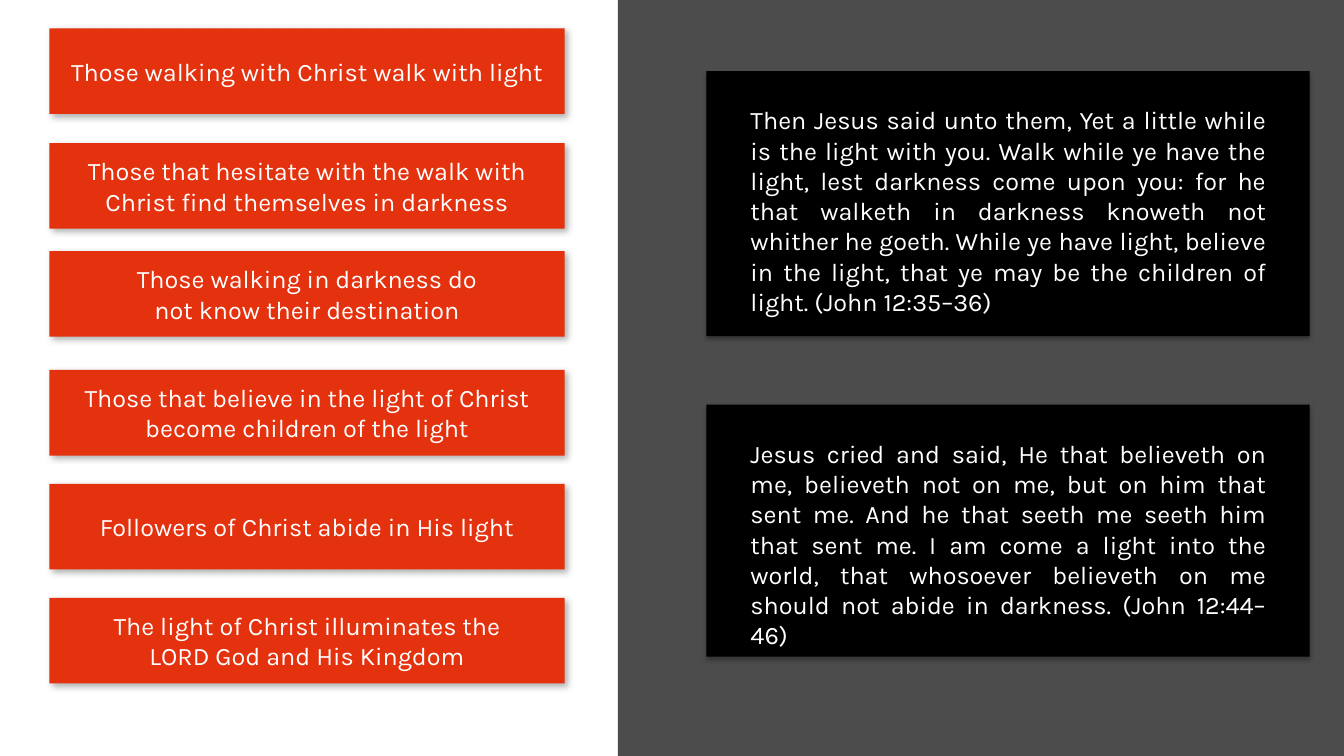
from dataclasses import dataclass

from lxml import etree
from pptx import Presentation
from pptx.dml.color import RGBColor
from pptx.enum.shapes import MSO_SHAPE
from pptx.enum.text import MSO_ANCHOR, MSO_AUTO_SIZE, PP_ALIGN
from pptx.oxml.ns import qn
from pptx.util import Pt

RECTANGLE = MSO_SHAPE.RECTANGLE
MIDDLE = MSO_ANCHOR.MIDDLE
GROW = MSO_AUTO_SIZE.SHAPE_TO_FIT_TEXT
CENTER = PP_ALIGN.CENTER
JUSTIFY = PP_ALIGN.JUSTIFY


@dataclass(frozen=True)
class Theme:
    font: str = "Karla"
    body_size: float = 18
    text: str = "FFFFFF"
    dark: str = "000000"
    accent: str = "E4310E"


@dataclass(frozen=True)
class Shadow:
    opacity: int
    blur: float
    distance: float
    angle: int


class SlideBuilder:
    def __init__(self, page, theme):
        self.page = page
        self.theme = theme

    def rectangle(self, left, top, width, height, color, shadow=None, opacity=100):
        box = self.page.shapes.add_shape(
            RECTANGLE, Pt(left), Pt(top), Pt(width), Pt(height)
        )
        box.shadow.inherit = False
        box.fill.solid()
        box.fill.fore_color.rgb = RGBColor.from_string(color)
        box.line.fill.background()
        if opacity < 100:
            solid_fill = box._element.spPr.find(qn("a:solidFill"))
            self.add_alpha(solid_fill[0], opacity)
        if shadow:
            self.add_shadow(box, shadow)
        return box

    def add_alpha(self, color_element, percent):
        alpha = etree.SubElement(color_element, qn("a:alpha"))
        alpha.set("val", str(percent * 1000))

    def add_shadow(self, box, shadow):
        effects = box._element.spPr.find(qn("a:effectLst"))
        outer = etree.SubElement(effects, qn("a:outerShdw"))
        outer.set("blurRad", str(Pt(shadow.blur)))
        outer.set("dist", str(Pt(shadow.distance)))
        outer.set("dir", str(shadow.angle * 60000))
        outer.set("algn", "ctr")
        outer.set("rotWithShape", "0")
        color = etree.SubElement(outer, qn("a:srgbClr"))
        color.set("val", self.theme.dark)
        self.add_alpha(color, shadow.opacity)

    def set_text(self, box, text, alignment):
        frame = box.text_frame
        frame.word_wrap = True
        frame.text = text
        for para in frame.paragraphs:
            para.alignment = alignment
            for span in para.runs:
                span.font.name = self.theme.font
                span.font.size = Pt(self.theme.body_size)
                span.font.color.rgb = RGBColor.from_string(self.theme.text)

    def statement(self, top, text):
        box = self.rectangle(
            35.3, top, 368, 61.2, self.theme.accent, Shadow(30, 4.5, 2.6, 53)
        )
        box.text_frame.vertical_anchor = MIDDLE
        self.set_text(box, text, CENTER)

    def scripture(self, top, height, text_height, text):
        self.rectangle(
            504.5, top, 431, height, self.theme.dark, Shadow(32, 3.5, 2.2, 90)
        )
        box = self.page.shapes.add_textbox(
            Pt(529), Pt(top + 20.5), Pt(382.5), Pt(text_height)
        )
        self.set_text(box, text, JUSTIFY)
        box.text_frame.auto_size = GROW


STATEMENTS = [
    (20.2, "Those walking with Christ walk with light"),
    (102.2, "Those that hesitate with the walk with Christ find themselves in darkness"),
    (179.3, "Those walking in darkness do\nnot know their destination"),
    (264.2, "Those that believe in the light of Christ become children of the light"),
    (345.6, "Followers of Christ abide in His light"),
    (427, "The light of Christ illuminates the\nLORD God and His Kingdom"),
]

SCRIPTURES = [
    (
        50.8, 189.3, 160.5,
        "Then Jesus said unto them, Yet a little while is the light with you. "
        "Walk while ye have the light, lest darkness come upon you: for he that "
        "walketh in darkness knoweth not whither he goeth. While ye have light, "
        "believe in the light, that ye may be the children of light. "
        "(John 12:35–36)",
    ),
    (
        289, 180, 138.5,
        "Jesus cried and said, He that believeth on me, believeth not on me, but "
        "on him that sent me. And he that seeth me seeth him that sent me. I am "
        "come a light into the world, that whosoever believeth on me should not "
        "abide in darkness. (John 12:44–46)",
    ),
]


def main():
    deck = Presentation()
    deck.slide_width = Pt(960)
    deck.slide_height = Pt(540)
    page = deck.slides.add_slide(deck.slide_layouts[6])
    theme = Theme()
    builder = SlideBuilder(page, theme)

    builder.rectangle(441.4, 0, 518.6, 540, theme.dark, opacity=70)
    for top, text in STATEMENTS:
        builder.statement(top, text)
    for top, height, text_height, text in SCRIPTURES:
        builder.scripture(top, height, text_height, text)

    deck.save("out.pptx")


if __name__ == "__main__":
    main()
